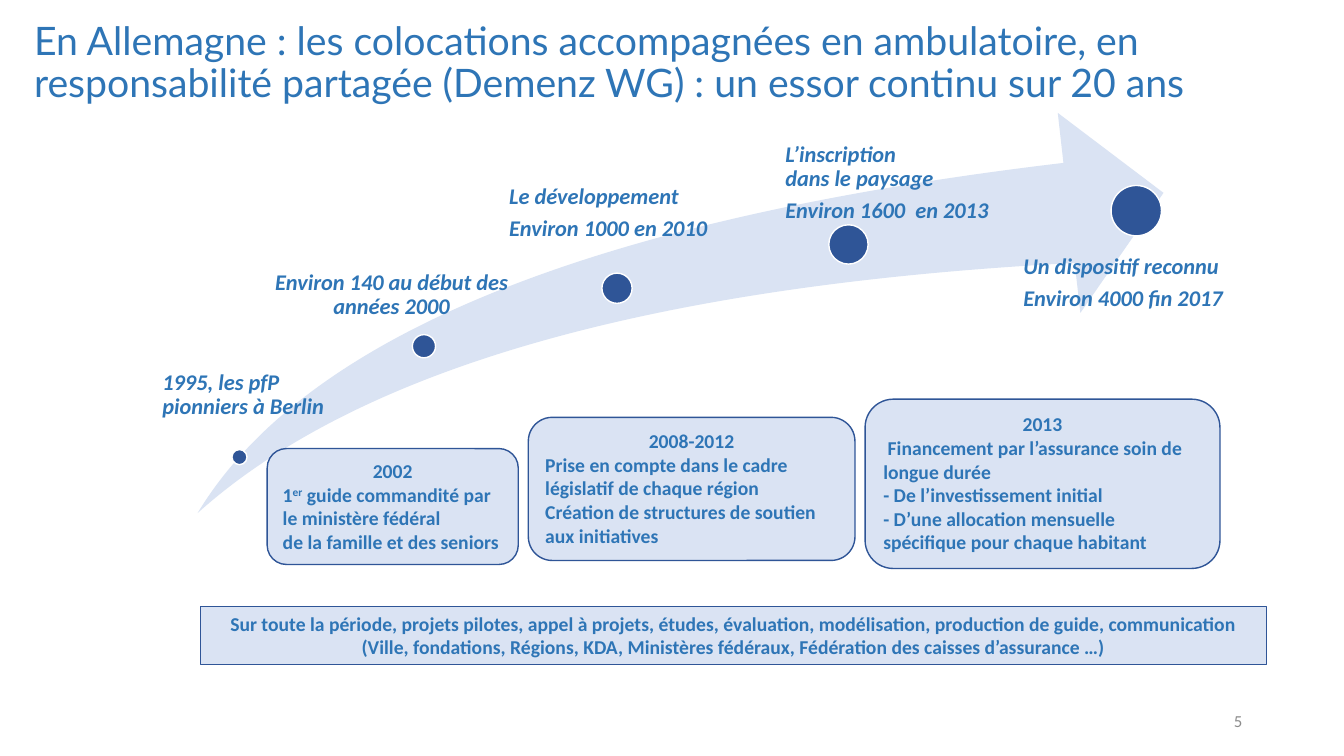
from pptx import Presentation
from pptx.dml.color import RGBColor
from pptx.enum.shapes import MSO_SHAPE
from pptx.enum.text import MSO_ANCHOR, MSO_AUTO_SIZE, PP_ALIGN
from pptx.util import Emu, Pt

SWOOSH, OVAL = MSO_SHAPE.SWOOSH_ARROW, MSO_SHAPE.OVAL
ROUNDED, RECT = MSO_SHAPE.ROUNDED_RECTANGLE, MSO_SHAPE.RECTANGLE
LEFT, CENTER, RIGHT = PP_ALIGN.LEFT, PP_ALIGN.CENTER, PP_ALIGN.RIGHT
TOP, MIDDLE = MSO_ANCHOR.TOP, MSO_ANCHOR.MIDDLE
GROW = MSO_AUTO_SIZE.SHAPE_TO_FIT_TEXT

PX = 9144  # 100 px to the inch

THEME = {
    "pale": RGBColor(0xDA, 0xE3, 0xF3),
    "navy": RGBColor(0x2F, 0x55, 0x97),
    "white": RGBColor(0xFF, 0xFF, 0xFF),
    "title": {"name": "Lato", "size": Pt(28), "color": RGBColor(0x2E, 0x75, 0xB6)},
    "label": {"name": "Calibri", "size": Pt(16), "color": RGBColor(0x2E, 0x75, 0xB6),
              "bold": True, "italic": True},
    "box": {"name": "Calibri", "size": Pt(14), "color": RGBColor(0x2E, 0x75, 0xB6),
            "bold": True},
    "number": {"name": "Calibri", "size": Pt(12), "color": RGBColor(0x8C, 0x8C, 0x8C)},
}


def draw(kind, box, fill, line=None):
    """Add a preset shape; box is left, top, width, height in px."""
    shape = slide.shapes.add_shape(kind, *[Emu(v * PX) for v in box])
    shape.shadow.inherit = False
    shape.fill.solid()
    shape.fill.fore_color.rgb = THEME[fill]
    if line:
        shape.line.color.rgb = THEME[line]
        shape.line.width = Pt(1)
    else:
        shape.line.fill.background()
    return shape


def write(holder, paragraphs, style, layout, frame_format):
    """Fill a shape or a new text box; \\v breaks a line, ^..^ is superscript."""
    if isinstance(holder, tuple):
        holder = slide.shapes.add_textbox(*[Emu(v * PX) for v in holder])
    frame = holder.text_frame
    frame.word_wrap = True
    for key, value in frame_format.items():
        setattr(frame, key, value)
    for i, (text, align) in enumerate(paragraphs):
        paragraph = frame.add_paragraph() if i else frame.paragraphs[0]
        paragraph.alignment = align
        for key, value in layout.items():
            setattr(paragraph, key, value)
        for n, line in enumerate(text.split("\v")):
            if n:
                paragraph.add_line_break()
            for k, piece in enumerate(line.split("^")):
                run = paragraph.add_run()
                run.text = piece
                for key, value in THEME[style].items():
                    if key == "color":
                        run.font.color.rgb = value
                    else:
                        setattr(run.font, key, value)
                if k % 2:
                    run.font._element.set("baseline", "30000")


prs = Presentation()
prs.slide_width, prs.slide_height = Emu(1333 * PX), Emu(750 * PX)
slide = prs.slides.add_slide(prs.slide_layouts[6])

# Rising arrow
arrow = draw(SWOOSH, (196, 112, 958, 397), "pale")
arrow.adjustments[0] = arrow.adjustments[1] = 0.25

# Milestones: dot (left, top, diameter), label box, left inset, alignment, lines
milestones = [
    ((230, 446, 15), (153, 368, 211, 70), 8, LEFT,
     ["1995, les pfP pionniers à Berlin"]),
    ((409, 332, 23), (246, 269, 273, 97), 12, CENTER,
     ["Environ 140 au début des années 2000"]),
    ((597, 271, 30), (489, 184, 278, 104), 16, LEFT,
     ["Le développement", "Environ 1000 en 2010"]),
    ((822, 223, 39), (758, 142, 320, 106), 21, LEFT,
     ["L’inscription\vdans le paysage", "Environ 1600  en 2013"]),
    ((1102, 184, 50), (988, 253, 288, 88), 27, LEFT,
     ["Un dispositif reconnu", "Environ 4000 fin 2017"]),
]
for (left, top, size), label_box, inset, align, lines in milestones:
    draw(OVAL, (left, top, size, size), "navy", "white")
    write(label_box, [(line, align) for line in lines], "label",
          {"line_spacing": 0.9, "space_after": Pt(5.5)},
          {"margin_left": Emu(inset * PX), "margin_top": 0, "margin_right": 0,
           "margin_bottom": 0, "vertical_anchor": TOP})

# Policy steps and the band for the whole period
panels = [
    (ROUNDED, (524, 414, 324, 142),
     [("2008-2012", CENTER),
      ("Prise en compte dans le cadre législatif de chaque région", LEFT),
      ("Création de structures de soutien aux initiatives", LEFT)]),
    (RECT, (199, 602, 1057, 57),
     [("Sur toute la période, projets pilotes, appel à projets, études, évaluation, "
       "modélisation, production de guide, communication", CENTER),
      ("(Ville, fondations, Régions, KDA, Ministères fédéraux, "
       "Fédération des caisses d’assurance …)", CENTER)]),
    (ROUNDED, (858, 396, 352, 168),
     [("2013", CENTER),
      (" Financement par l’assurance soin de longue durée", LEFT),
      ("- De l’investissement initial", LEFT),
      ("- D’une allocation mensuelle spécifique pour chaque habitant", LEFT)]),
    (ROUNDED, (265, 445, 249, 115),
     [("2002", CENTER),
      ("1^er^ guide commandité par le ministère fédéral", LEFT),
      ("de la famille et des seniors", LEFT)]),
]
for kind, box, paragraphs in panels:
    write(draw(kind, box, "pale", "navy"), paragraphs, "box", {},
          {"vertical_anchor": TOP, "auto_size": GROW})

# Title and slide number
write((24, 15, 1233, 97),
      [("En Allemagne : les colocations accompagnées en ambulatoire, en responsabilité "
        "partagée (Demenz WG) : un essor continu sur 20 ans", LEFT)],
      "title", {"line_spacing": 0.9}, {"vertical_anchor": MIDDLE})
write((942, 695, 300, 40), [("5", RIGHT)], "number", {}, {"vertical_anchor": MIDDLE})

prs.save("out.pptx")
